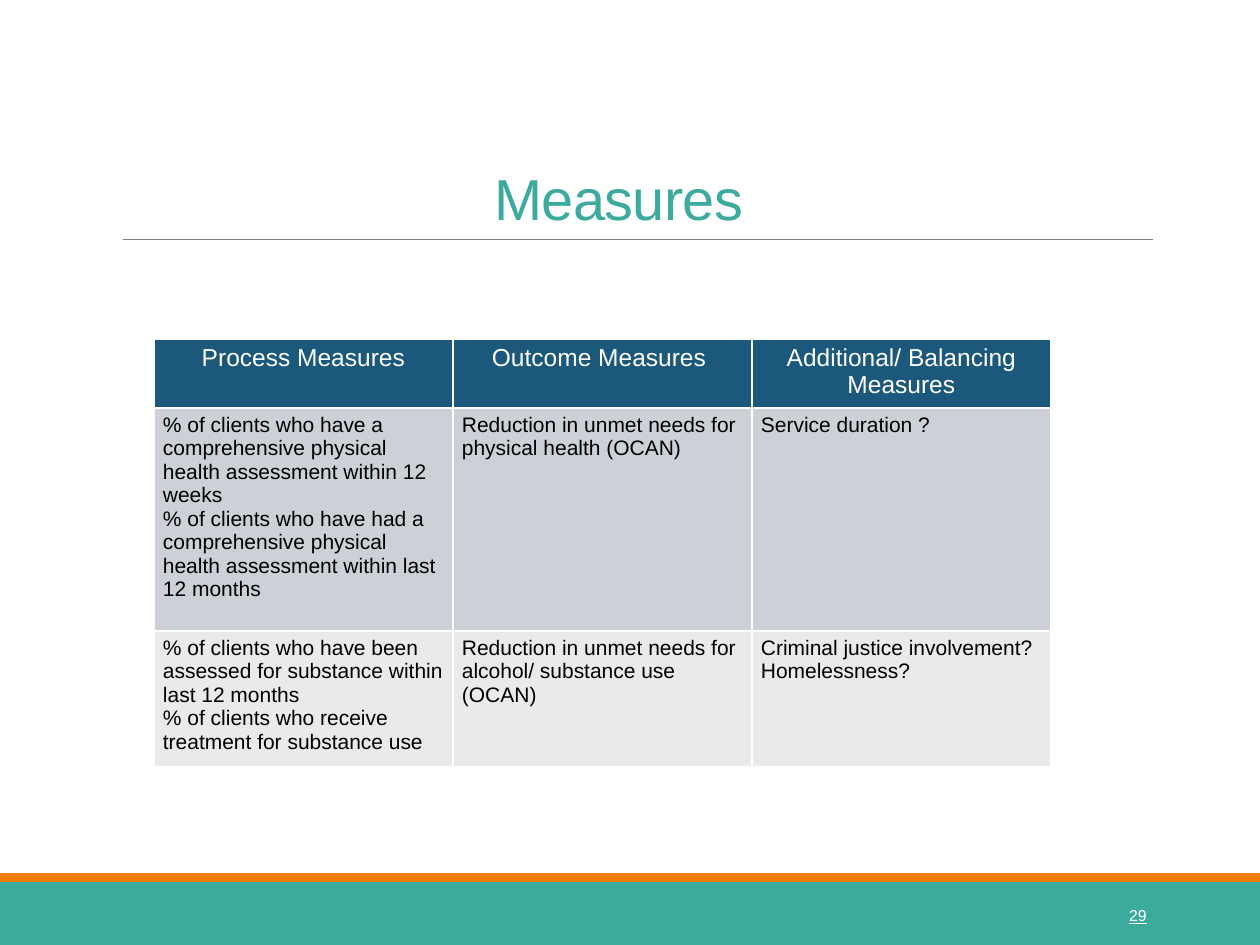
from pptx import Presentation, util as u
from pptx.dml.color import RGBColor
from pptx.enum import shapes, text
from pptx.oxml import parse_xml
from pptx.oxml.ns import nsdecls

PX = 914400 / 126
TEAL, ORANGE, NAVY, WHITE = "3CAA9D", "F07F09", "1B587C", "FFFFFF"


def px(*lengths):
    return [u.Emu(round(length * PX)) for length in lengths]


def style(paragraph, size, color, align):
    paragraph.font.name = "Arial"
    paragraph.font.size = u.Pt(size)
    paragraph.font.color.rgb = RGBColor.from_string(color)
    paragraph.alignment = align


presentation = Presentation()
presentation.slide_width, presentation.slide_height = px(1260, 945)
slide = presentation.slides.add_slide(presentation.slide_layouts[6])

# Footer bands
for top, height, color in [(882, 63, TEAL), (873, 9, ORANGE)]:
    band = slide.shapes.add_shape(shapes.MSO_SHAPE.RECTANGLE, *px(0, top, 1260, height))
    band.shadow.inherit = False
    band.fill.solid()
    band.fill.fore_color.rgb = RGBColor.from_string(color)
    band.line.fill.background()

# Rule under the title
rule = slide.shapes.add_connector(shapes.MSO_CONNECTOR.STRAIGHT, *px(123, 239, 1153, 239))
rule.line.color.rgb = RGBColor.from_string("808080")
rule.line.width = u.Pt(0.5)
rule._element.spPr.append(parse_xml(f"<a:effectLst {nsdecls('a')}/>"))

# Title and slide number
for box, wording, size, color, align, anchor in [
    ((107, 38, 1039, 200), "Measures ", 33, TEAL, text.PP_ALIGN.CENTER, text.MSO_ANCHOR.BOTTOM),
    ((1023, 890, 136, 50), "29", 9, WHITE, text.PP_ALIGN.RIGHT, text.MSO_ANCHOR.MIDDLE),
]:
    frame = slide.shapes.add_textbox(*px(*box)).text_frame
    frame.word_wrap = True
    frame.vertical_anchor = anchor
    frame.text = wording
    paragraph = frame.paragraphs[0]
    style(paragraph, size, color, align)
    if wording == "29":
        paragraph.font.underline = True
    else:
        paragraph.line_spacing = 0.85
        paragraph.runs[0]._r.get_or_add_rPr().set("spc", "-40")

# Measures table
rows = [
    ["Process Measures", "Outcome Measures ", "Additional/ Balancing Measures"],
    [
        "% of clients who have a comprehensive physical health assessment within 12 weeks\n"
        "% of clients who have had a comprehensive physical health assessment within last 12 months",
        "Reduction in unmet needs for physical health (OCAN)",
        "Service duration ?",
    ],
    [
        "% of clients who have been assessed for substance within last 12 months\n"
        "% of clients who receive treatment for substance use",
        "Reduction in unmet needs for alcohol/ substance use (OCAN)",
        "Criminal justice involvement?\nHomelessness?",
    ],
]
row_styles = [
    (69, NAVY, 14, WHITE, text.PP_ALIGN.CENTER),
    (223, "CDD1D7", 12, "000000", text.PP_ALIGN.LEFT),
    (135, "E8EAEC", 12, "000000", text.PP_ALIGN.LEFT),
]
table = slide.shapes.add_table(3, 3, *px(154, 339, 897, 427)).table
for column in table.columns:
    column.width = px(299)[0]
for row, wordings, (height, fill, size, color, align) in zip(table.rows, rows, row_styles):
    row.height = px(height)[0]
    for cell, wording in zip(row.cells, wordings):
        cell.margin_left, cell.margin_right, cell.margin_top, cell.margin_bottom = px(9, 9, 5, 5)
        cell.text = wording
        for paragraph in cell.text_frame.paragraphs:
            style(paragraph, size, color, align)
        # Borders come before the fill in the cell properties
        properties = cell._tc.get_or_add_tcPr()
        for side in ("lnL", "lnR", "lnT", "lnB"):
            properties.append(parse_xml(
                f'<a:{side} {nsdecls("a")} w="12700"><a:solidFill>'
                f'<a:srgbClr val="{WHITE}"/></a:solidFill></a:{side}>'))
        cell.fill.solid()
        cell.fill.fore_color.rgb = RGBColor.from_string(fill)
        if size == 14:
            for paragraph in cell.text_frame.paragraphs:
                paragraph.font.bold = False

presentation.save("out.pptx")
